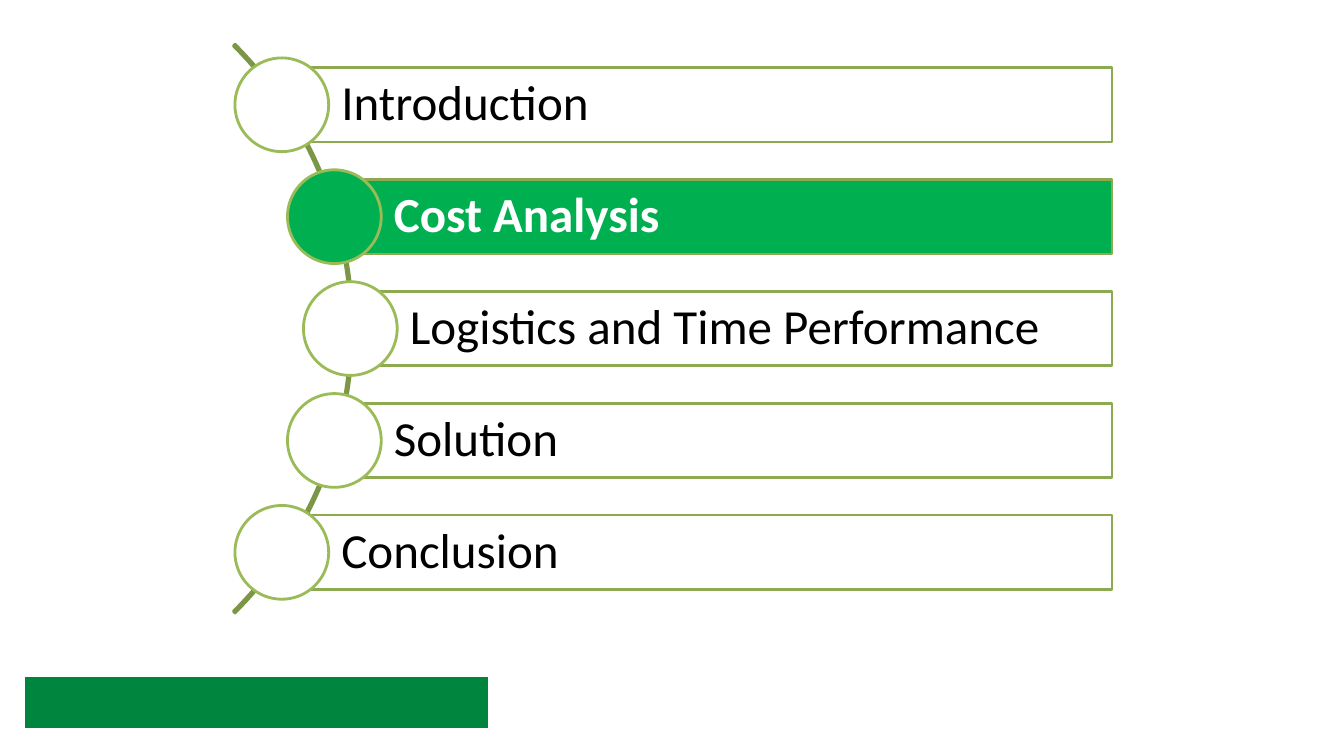
import math

from pptx import Presentation
from pptx.dml.color import RGBColor
from pptx.enum import shapes, text
from pptx.util import Inches, Pt

COLORS = {
    "white": "FFFFFF",
    "black": "000000",
    "highlight": "00B050",
    "arc": "7C9647",
    "bar_edge": "8DAA51",
    "circle_edge": "9BBB59",
    "footer": "00853E",
}
AGENDA = ["Introduction", "Cost Analysis", "Logistics and Time Performance",
          "Solution", "Conclusion"]
CURRENT = "Cost Analysis"

ARC_X, ARC_Y, ARC_RADIUS = -0.49, 3.26, 3.99
CENTER_RADIUS = 3.965
STEP = 1.11
BAR_RIGHT, BAR_HEIGHT = 11.03, 0.74
CIRCLE_SIZE = 0.93


class AgendaSlide:
    font = "Calibri"
    size = Pt(35)

    def __init__(self, slide):
        self.slide = slide

    def color(self, name):
        return RGBColor.from_string(COLORS[name])

    def shape(self, preset, left, top, width, height, fill, edge, weight=2):
        item = self.slide.shapes.add_shape(
            preset, Inches(left), Inches(top), Inches(width), Inches(height))
        item.shadow.inherit = False
        if fill:
            item.fill.solid()
            item.fill.fore_color.rgb = self.color(fill)
        else:
            item.fill.background()
        item.line.color.rgb = self.color(edge)
        item.line.width = Pt(weight)
        return item

    def arc(self, x, y, radius):
        arc = self.shape(shapes.MSO_SHAPE.BLOCK_ARC, x - radius, y - radius,
                         2 * radius, 2 * radius, None, "arc")
        for index, value in enumerate((189, 27, 0.003)):
            arc.adjustments[index] = value

    def bar(self, x, y, label, fill, ink, bold):
        bar = self.shape(shapes.MSO_SHAPE.RECTANGLE, x, y - BAR_HEIGHT / 2,
                         BAR_RIGHT - x, BAR_HEIGHT, fill, "bar_edge")
        frame = bar.text_frame
        frame.word_wrap = True
        frame.vertical_anchor = text.MSO_ANCHOR.MIDDLE
        frame.margin_left = Inches(0.59)
        frame.margin_top = frame.margin_right = frame.margin_bottom = Inches(0.1)
        paragraph = frame.paragraphs[0]
        paragraph.alignment = text.PP_ALIGN.LEFT
        paragraph.line_spacing = 0.9
        run = paragraph.add_run()
        run.text = label
        run.font.name = self.font
        run.font.size = self.size
        run.font.bold = bold
        run.font.color.rgb = self.color(ink)

    def circle(self, x, y, fill):
        self.shape(shapes.MSO_SHAPE.OVAL, x - CIRCLE_SIZE / 2, y - CIRCLE_SIZE / 2,
                   CIRCLE_SIZE, CIRCLE_SIZE, fill, "circle_edge")

    def entry(self, offset, label, current):
        x = ARC_X + math.sqrt(CENTER_RADIUS ** 2 - offset ** 2)
        y = ARC_Y + offset
        fill, ink = ("highlight", "white") if current else ("white", "black")
        self.bar(x, y, label, fill, ink, current)
        self.circle(x, y, fill)

    def footer(self):
        self.shape(shapes.MSO_SHAPE.RECTANGLE, 0.25, 6.72, 4.59, 0.5,
                   "footer", "footer", 0.75)


def main():
    deck = Presentation()
    deck.slide_width = Inches(13.33)
    deck.slide_height = Inches(7.5)
    agenda = AgendaSlide(deck.slides.add_slide(deck.slide_layouts[6]))
    agenda.arc(ARC_X, ARC_Y, ARC_RADIUS)
    middle = len(AGENDA) // 2
    for index, label in enumerate(AGENDA):
        agenda.entry((index - middle) * STEP, label, label == CURRENT)
    agenda.footer()
    deck.save("out.pptx")


if __name__ == "__main__":
    main()
